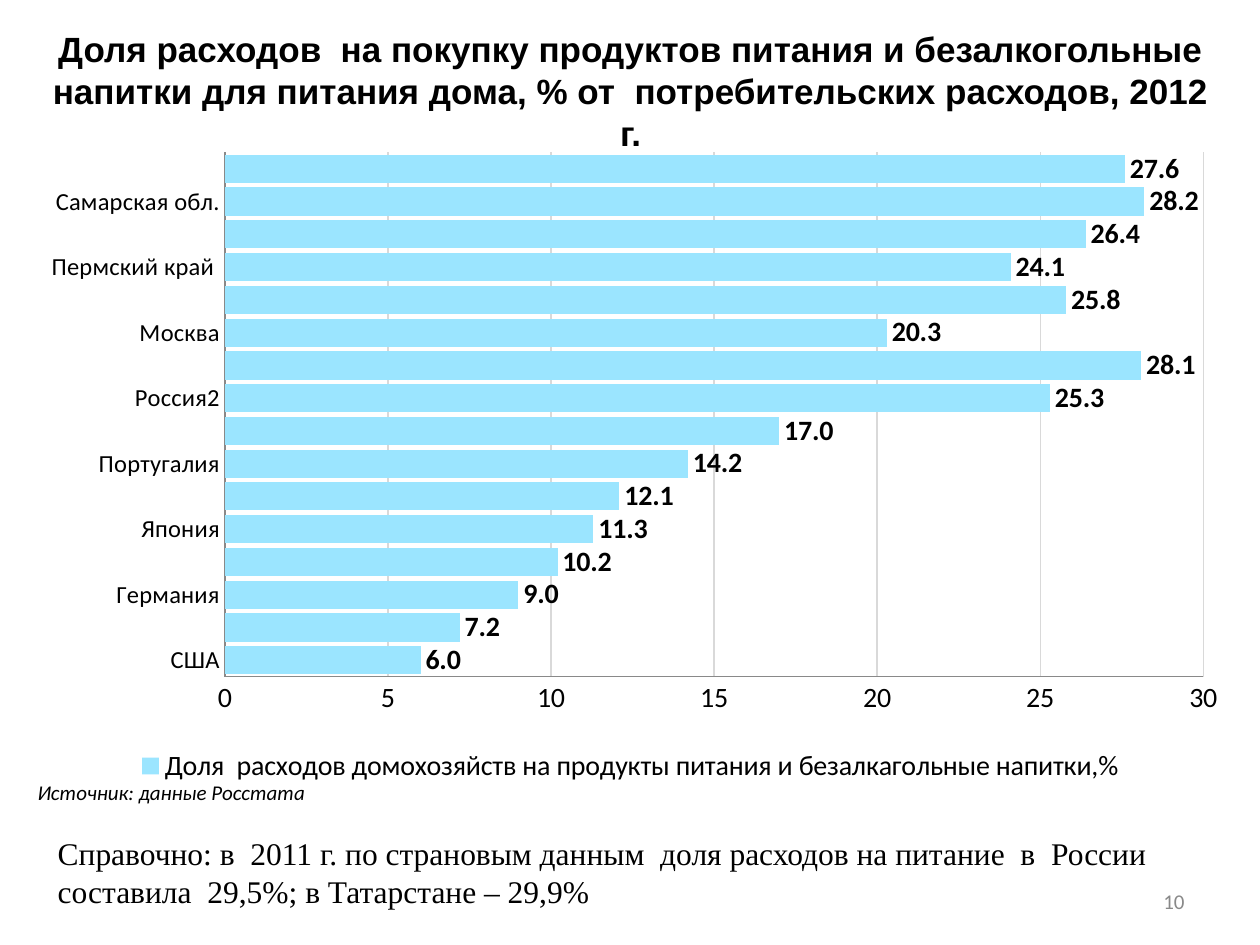
"""Build a slide with a bar chart of household food spending shares."""
from lxml import etree
from pptx import Presentation
from pptx.chart.data import CategoryChartData
from pptx.dml.color import RGBColor
from pptx.enum.chart import XL_CHART_TYPE, XL_LABEL_POSITION, XL_LEGEND_POSITION, XL_TICK_MARK
from pptx.enum.text import MSO_ANCHOR, PP_ALIGN
from pptx.oxml.ns import qn
from pptx.util import Inches, Pt

BAR = XL_CHART_TYPE.BAR_CLUSTERED
OUTSIDE = XL_LABEL_POSITION.OUTSIDE_END
BOTTOM = XL_LEGEND_POSITION.BOTTOM
NO_TICK = XL_TICK_MARK.NONE
TOP, MIDDLE = MSO_ANCHOR.TOP, MSO_ANCHOR.MIDDLE
LEFT, CENTER, RIGHT = PP_ALIGN.LEFT, PP_ALIGN.CENTER, PP_ALIGN.RIGHT

BLACK = RGBColor(0x00, 0x00, 0x00)
GRAY = RGBColor(0x89, 0x89, 0x89)
GRID = RGBColor(0xD9, 0xD9, 0xD9)
SKY = RGBColor(0x9B, 0xE5, 0xFF)

SHARES = {
    "США": 6, "Великобритания": 7.2, "Германия": 9, "Франция": 10.2,
    "Япония": 11.3, "Италия": 12.1, "Португалия": 14.2, "Польша": 17,
    "Россия2": 25.3, "Россия 1": 28.1, "Москва": 20.3, "Башкортостан": 25.8,
    "Пермский край ": 24.1, "Нижегородская обл.": 26.4,
    "Самарская обл.": 28.2, "Татарстан": 27.6,
}
PLOT = {"layoutTarget": "inner", "xMode": "edge", "yMode": "edge",
        "x": 0.165, "y": 0.029, "w": 0.808, "h": 0.8}
TEXTS = [
    ("Справочно: в  2011 г. по страновым данным  доля расходов на питание  в  России "
     "составила  29,5%; в Татарстане – 29,9%",
     (0.36, 6.57, 9.5, 0.71), LEFT, TOP, 0,
     {"size": Pt(18), "name": "Times New Roman"}, BLACK),
    ("Доля расходов  на покупку продуктов питания и безалкогольные напитки для питания "
     "дома, % от  потребительских расходов, 2012 г.",
     (0.2, 0.17, 9.61, 0.77), CENTER, TOP, 0,
     {"size": Pt(20), "name": "Arial", "bold": True}, BLACK),
    ("Источник: данные Росстата",
     (0.2, 6.14, 9.14, 0.43), LEFT, TOP, 2.4,
     {"size": Pt(12), "name": "Calibri", "italic": True}, BLACK),
    ("10", (7.17, 6.95, 2.33, 0.4), RIGHT, MIDDLE, 0,
     {"size": Pt(12), "name": "Calibri"}, GRAY),
]


def set_font(font, values, color):
    for key, value in values.items():
        setattr(font, key, value)
    font.color.rgb = color


prs = Presentation()
prs.slide_width, prs.slide_height = Inches(10), Inches(7.5)
s = prs.slides.add_slide(prs.slide_layouts[6])

data = CategoryChartData(number_format="General")
data.categories = list(SHARES)
data.add_series("Доля  расходов домохозяйств на продукты питания и безалкагольные напитки,%",
                list(SHARES.values()))
box = [Inches(v) for v in (0.2, 1.06, 9.61, 5.2)]
chart = s.shapes.add_chart(BAR, *box, data).chart
chart.has_title = False
set_font(chart.font, {"size": Pt(10), "name": "Calibri"}, BLACK)
chart.has_legend = True
chart.legend.position = BOTTOM
chart.legend.include_in_layout = False
set_font(chart.legend.font, {"size": Pt(16), "name": "Calibri"}, BLACK)

for axis, size in ((chart.category_axis, 14), (chart.value_axis, 16)):
    axis.major_tick_mark = axis.minor_tick_mark = NO_TICK
    axis.format.line.color.rgb = GRAY
    axis.format.line.width = Pt(0.75)
    set_font(axis.tick_labels.font, {"size": Pt(size), "name": "Calibri"}, BLACK)
axis = chart.value_axis
axis.minimum_scale, axis.maximum_scale, axis.major_unit = 0, 30, 5
axis.has_major_gridlines = True
axis.major_gridlines.format.line.color.rgb = GRID
axis.major_gridlines.format.line.width = Pt(0.75)

plot = chart.plots[0]
plot.gap_width = 16
plot.vary_by_categories = False
fill = plot.series[0].format.fill
fill.solid()
fill.fore_color.rgb = SKY
plot.has_data_labels = True
labels = plot.data_labels
labels.show_value = True
labels.number_format = "#,##0.0"
labels.number_format_is_linked = False
labels.position = OUTSIDE
set_font(labels.font, {"size": Pt(16), "name": "Calibri", "bold": True}, BLACK)

area = chart.element.find(".//" + qn("c:plotArea"))
for old in area.findall(qn("c:layout")):
    area.remove(old)
layout = etree.Element(qn("c:layout"))
manual = etree.SubElement(layout, qn("c:manualLayout"))
for tag, value in PLOT.items():
    etree.SubElement(manual, qn("c:" + tag)).set("val", str(value))
area.insert(0, layout)

for text, place, align, anchor, before, values, color in TEXTS:
    sp = s.shapes.add_textbox(*[Inches(v) for v in place])
    tf = sp.text_frame
    tf.word_wrap = True
    tf.vertical_anchor = anchor
    p = tf.paragraphs[0]
    p.alignment = align
    p.space_before = Pt(before)
    r = p.add_run()
    r.text = text
    set_font(r.font, values, color)

prs.save("out.pptx")
